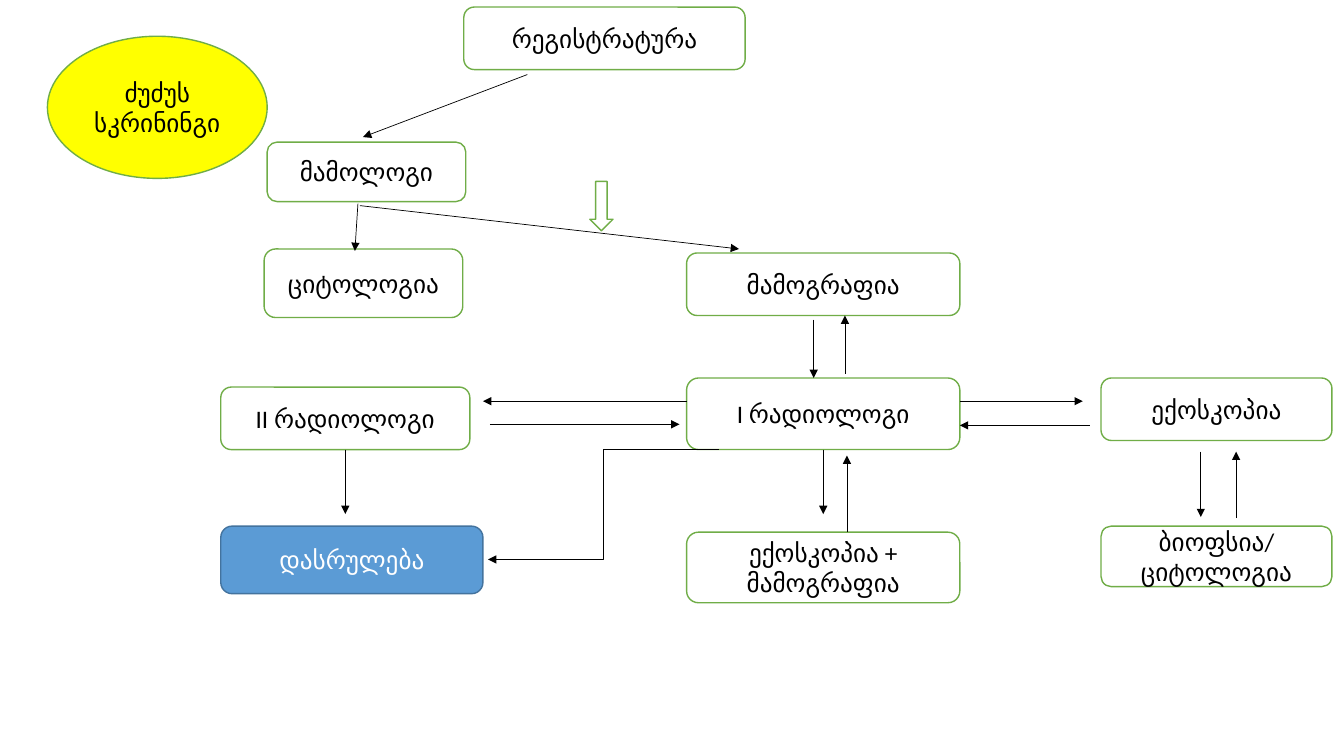
from lxml import etree
from pptx import Presentation
from pptx.dml.color import RGBColor
from pptx.enum.shapes import MSO_CONNECTOR, MSO_SHAPE
from pptx.enum.text import MSO_ANCHOR, PP_ALIGN
from pptx.oxml.ns import qn
from pptx.util import Inches, Pt

ROUNDED, OVAL, DOWN = MSO_SHAPE.ROUNDED_RECTANGLE, MSO_SHAPE.OVAL, MSO_SHAPE.DOWN_ARROW
STRAIGHT, ELBOW = MSO_CONNECTOR.STRAIGHT, MSO_CONNECTOR.ELBOW
BOTTOM = 2

COLOURS = {"white": "FFFFFF", "black": "000000", "green": "70AD47",
           "yellow": "FFFF00", "blue": "5B9BD5", "navy": "43739E"}
FONT = {"name": "Calibri", "size": Pt(18)}

# Styles: preset shape, fill, outline, text colour
STYLES = {
    "step": (ROUNDED, "white", "green", "black"),
    "title": (OVAL, "yellow", "green", "black"),
    "end": (ROUNDED, "blue", "navy", "white"),
    "marker": (DOWN, "white", "green", "black"),
}

# Columns and rows shared by several boxes
CENTRE_LEFT, CENTRE_WIDTH = 6.81, 2.71
RIGHT_LEFT, RIGHT_WIDTH = 10.92, 2.29
LEFT_EDGE = 2.19
READING_TOP, LAST_TOP = 3.75, 5.22

# Key: style, paragraphs, (left, top, width, height)
BOXES = {
    "registry": ("step", ["რეგისტრატურა"], (4.6, 0.07, 2.79, 0.62)),
    "screening": ("title", ["ძუძუს სკრინინგი"], (0.47, 0.36, 2.18, 1.41)),
    "mammologist": ("step", ["მამოლოგი"], (2.65, 1.41, 1.97, 0.59)),
    "marker": ("marker", [], (5.85, 1.8, 0.23, 0.49)),
    "cytology": ("step", ["ციტოლოგია"], (2.62, 2.47, 1.97, 0.68)),
    "mammography": ("step", ["მამოგრაფია"], (CENTRE_LEFT, 2.51, CENTRE_WIDTH, 0.62)),
    "radiologist 1": ("step", ["I რადიოლოგი"],
                      (CENTRE_LEFT, READING_TOP, CENTRE_WIDTH, 0.71)),
    "echoscopy": ("step", ["ექოსკოპია"], (RIGHT_LEFT, READING_TOP, RIGHT_WIDTH, 0.62)),
    "both scans": ("step", ["ექოსკოპია + მამოგრაფია"],
                   (CENTRE_LEFT, 5.28, CENTRE_WIDTH, 0.7)),
    "biopsy": ("step", ["ბიოფსია/", "ციტოლოგია"],
               (RIGHT_LEFT, LAST_TOP, RIGHT_WIDTH, 0.6)),
    "radiologist 2": ("step", ["II რადიოლოგი"], (LEFT_EDGE, 3.84, 2.47, 0.62)),
    "finish": ("end", ["დასრულება"], (LEFT_EDGE, LAST_TOP, 2.6, 0.67)),
}

# Kind, start, end, box whose bottom middle the arrow leaves
ARROWS = [
    (STRAIGHT, (5.23, 0.74), (3.6, 1.36), None),
    (STRAIGHT, (3.57, 2.04), (7.33, 2.47), None),
    (STRAIGHT, (3.55, 2.02), (3.52, 2.49), None),
    (STRAIGHT, (8.07, 3.17), (8.07, 3.75), None),
    (STRAIGHT, (8.38, 3.71), (8.38, 3.13), None),
    (STRAIGHT, (10.81, 4.22), (9.52, 4.22), None),
    (STRAIGHT, (9.52, 3.98), (10.74, 3.98), None),
    (STRAIGHT, (6.81, 3.98), (4.79, 3.98), None),
    (STRAIGHT, (4.86, 4.21), (6.74, 4.21), None),
    (STRAIGHT, (8.17, 4.46), (8.17, 5.1), "radiologist 1"),
    (STRAIGHT, (8.4, 5.28), (8.4, 4.52), None),
    (STRAIGHT, (11.91, 4.48), (11.91, 5.13), None),
    (STRAIGHT, (12.26, 5.14), (12.26, 4.48), None),
    (STRAIGHT, (3.42, 4.46), (3.42, 5.1), "radiologist 2"),
    (ELBOW, (7.13, 4.46), (4.84, 5.55), None),
]


def colour(name):
    return RGBColor.from_string(COLOURS[name])


def add_box(page, style, paragraphs, place):
    preset, fill, outline, text_colour = STYLES[style]
    box = page.shapes.add_shape(preset, *map(Inches, place))
    box.shadow.inherit = False
    box.fill.solid()
    box.fill.fore_color.rgb = colour(fill)
    box.line.color.rgb = colour(outline)
    box.line.width = Pt(1)
    frame = box.text_frame
    frame.word_wrap = True
    frame.vertical_anchor = MSO_ANCHOR.MIDDLE
    for index, text in enumerate(paragraphs):
        para = frame.add_paragraph() if index else frame.paragraphs[0]
        para.alignment = PP_ALIGN.CENTER
        span = para.add_run()
        span.text = text
        for attribute, value in FONT.items():
            setattr(span.font, attribute, value)
        span.font.color.rgb = colour(text_colour)
    return box


def add_arrow(page, kind, start, end, source):
    arrow = page.shapes.add_connector(kind, *map(Inches, start + end))
    if source is not None:
        arrow.begin_connect(source, BOTTOM)
        arrow.end_x = arrow.begin_x  # keeps the arrow vertical
    arrow.line.color.rgb = colour("black")
    arrow.line.width = Pt(0.5)
    etree.SubElement(arrow.line._get_or_add_ln(), qn("a:tailEnd"), type="triangle")
    etree.SubElement(arrow._element.spPr, qn("a:effectLst"))


def main():
    deck = Presentation()
    deck.slide_width, deck.slide_height = Inches(13.33), Inches(7.5)
    page = deck.slides.add_slide(deck.slide_layouts[6])
    boxes = {key: add_box(page, *box) for key, box in BOXES.items()}
    for kind, start, end, source in ARROWS:
        add_arrow(page, kind, start, end, boxes.get(source))
    deck.save("out.pptx")


if __name__ == "__main__":
    main()
